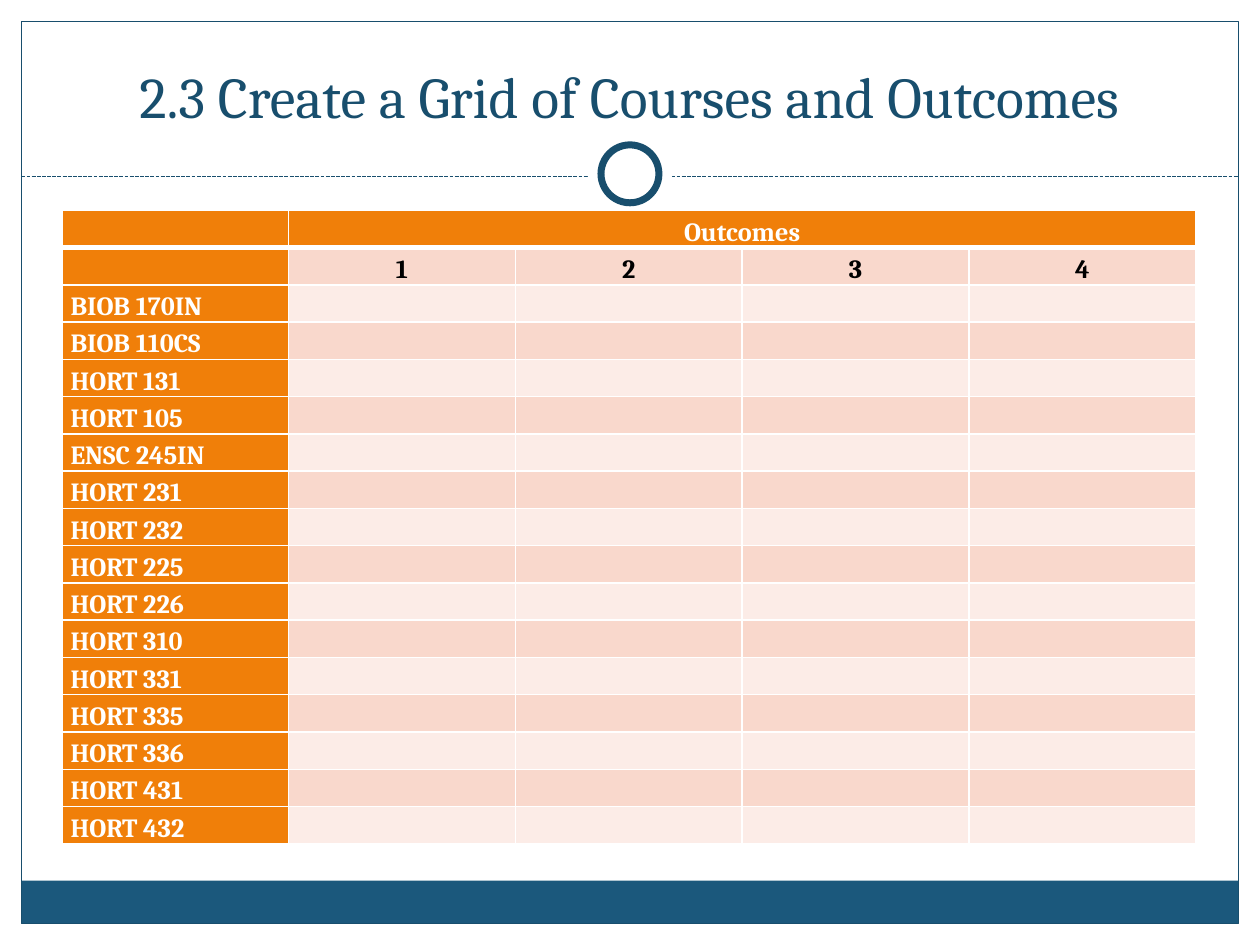
from typing import NamedTuple, Optional

from lxml.etree import SubElement
from pptx import Presentation
from pptx.dml.color import RGBColor
from pptx.enum.dml import MSO_LINE
from pptx.enum.shapes import MSO_CONNECTOR, MSO_SHAPE
from pptx.enum.text import MSO_ANCHOR, PP_ALIGN
from pptx.oxml.ns import qn
from pptx.util import Inches, Pt

WHITE = RGBColor(0xFF, 0xFF, 0xFF)
BLACK = RGBColor(0x00, 0x00, 0x00)
NAVY = RGBColor(0x18, 0x4E, 0x6D)
BLUE = RGBColor(0x1B, 0x58, 0x7C)
ORANGE = RGBColor(0xF0, 0x7F, 0x09)
BANDS = (RGBColor(0xFC, 0xEC, 0xE7), RGBColor(0xF9, 0xD8, 0xCC))
FONT = "Cambria"

WIDTH, HEIGHT = 10, 7.5
MARGIN = 0.17
RULE_Y = 1.4
TABLE_LEFT, TABLE_TOP = 0.49, 1.67
COL_WIDTH, ROW_HEIGHT = 1.8, 5.03 / 17

OUTCOMES = ("1", "2", "3", "4")
COURSES = (
    "BIOB 170IN", "BIOB 110CS", "HORT 131", "HORT 105", "ENSC 245IN",
    "HORT 231", "HORT 232", "HORT 225", "HORT 226", "HORT 310",
    "HORT 331", "HORT 335", "HORT 336", "HORT 431", "HORT 432",
)


class Decoration(NamedTuple):
    kind: MSO_SHAPE
    left: float
    top: float
    width: float
    height: float
    fill: Optional[RGBColor] = None
    line_width: float = 0


def disc(diameter: float, line_width: float = 0) -> Decoration:
    """A white circle centred on the slide, just above the rule."""
    return Decoration(MSO_SHAPE.OVAL, (WIDTH - diameter) / 2, 1.38 - diameter / 2,
                      diameter, diameter, WHITE, line_width)


def draw_decoration(s, d: Decoration) -> None:
    sp = s.shapes.add_shape(d.kind, *map(Inches, (d.left, d.top, d.width, d.height)))
    sp.shadow.inherit = False
    if d.fill is None:
        sp.fill.background()
    else:
        sp.fill.solid()
        sp.fill.fore_color.rgb = d.fill
    if d.line_width:
        sp.line.color.rgb = NAVY
        sp.line.width = Pt(d.line_width)
    else:
        sp.line.fill.background()


def draw_rule(s) -> None:
    rule = s.shapes.add_connector(
        MSO_CONNECTOR.STRAIGHT, Inches(MARGIN), Inches(RULE_Y),
        Inches(WIDTH - MARGIN), Inches(RULE_Y))
    rule.line.color.rgb = NAVY
    rule.line.width = Pt(0.75)
    rule.line.dash_style = MSO_LINE.SQUARE_DOT
    SubElement(rule._element.spPr, qn("a:effectLst"))


def set_title(s, text: str) -> None:
    title = s.shapes.title
    title.left, title.top = Inches(0.33), Inches(0.25)
    title.width, title.height = Inches(9.33), Inches(0.83)
    tf = title.text_frame
    tf.text = text
    tf.vertical_anchor = MSO_ANCHOR.BOTTOM
    p = tf.paragraphs[0]
    p.alignment = PP_ALIGN.CENTER
    p.font.name, p.font.size = FONT, Pt(33)
    p.font.color.rgb = NAVY


def set_borders(cell, bottom: float) -> None:
    """White borders, 1 pt except for the bottom one."""
    tc_pr = cell._tc.get_or_add_tcPr()
    for side, width in (("L", 1), ("R", 1), ("T", 1), ("B", bottom)):
        ln = SubElement(tc_pr, qn(f"a:ln{side}"), w=str(Pt(width)))
        fill = SubElement(ln, qn("a:solidFill"))
        SubElement(fill, qn("a:srgbClr"), val=str(WHITE))


def format_cell(cell, row: int, col: int, text: str) -> None:
    is_header = row == 0 or col == 0
    set_borders(cell, bottom=3 if row == 0 else 1)
    cell.fill.solid()
    cell.fill.fore_color.rgb = ORANGE if is_header else BANDS[row % 2]
    cell.margin_left = cell.margin_right = Inches(0.07)
    cell.margin_top = cell.margin_bottom = 0
    cell.vertical_anchor = MSO_ANCHOR.BOTTOM
    p = cell.text_frame.paragraphs[0]
    p.font.name, p.font.size, p.font.bold = FONT, Pt(15), True
    p.font.color.rgb = WHITE if is_header else BLACK
    if text:
        p.add_run().text = text
        p.line_spacing = 1.15
        p.alignment = PP_ALIGN.LEFT if col == 0 else PP_ALIGN.CENTER


def draw_grid(s) -> None:
    blanks = ("",) * len(OUTCOMES)
    rows = [("", "Outcomes", *blanks[1:]), ("", *OUTCOMES)]
    rows += [(course, *blanks) for course in COURSES]
    n_rows, n_cols = len(rows), len(rows[0])
    table = s.shapes.add_table(
        n_rows, n_cols, Inches(TABLE_LEFT), Inches(TABLE_TOP),
        Inches(n_cols * COL_WIDTH), Inches(n_rows * ROW_HEIGHT)).table
    for column in table.columns:
        column.width = Inches(COL_WIDTH)
    for r, texts in enumerate(rows):
        table.rows[r].height = Inches(ROW_HEIGHT)
        for c, text in enumerate(texts):
            format_cell(table.cell(r, c), r, c, text)
    table.cell(0, 1).merge(table.cell(0, n_cols - 1))


def main() -> None:
    prs = Presentation()
    prs.slide_width, prs.slide_height = Inches(WIDTH), Inches(HEIGHT)
    s = prs.slides.add_slide(prs.slide_layouts[5])
    inner_width, inner_height = WIDTH - 2 * MARGIN, HEIGHT - 2 * MARGIN
    draw_decoration(s, Decoration(MSO_SHAPE.RECTANGLE, MARGIN, 6.99,
                                  inner_width, 0.34, fill=BLUE))
    draw_decoration(s, Decoration(MSO_SHAPE.RECTANGLE, MARGIN, MARGIN,
                                  inner_width, inner_height, line_width=0.75))
    draw_rule(s)
    draw_decoration(s, disc(0.67))
    draw_decoration(s, disc(0.46, line_width=4))
    set_title(s, "2.3 Create a Grid of Courses and Outcomes")
    draw_grid(s)
    prs.save("out.pptx")


if __name__ == "__main__":
    main()
